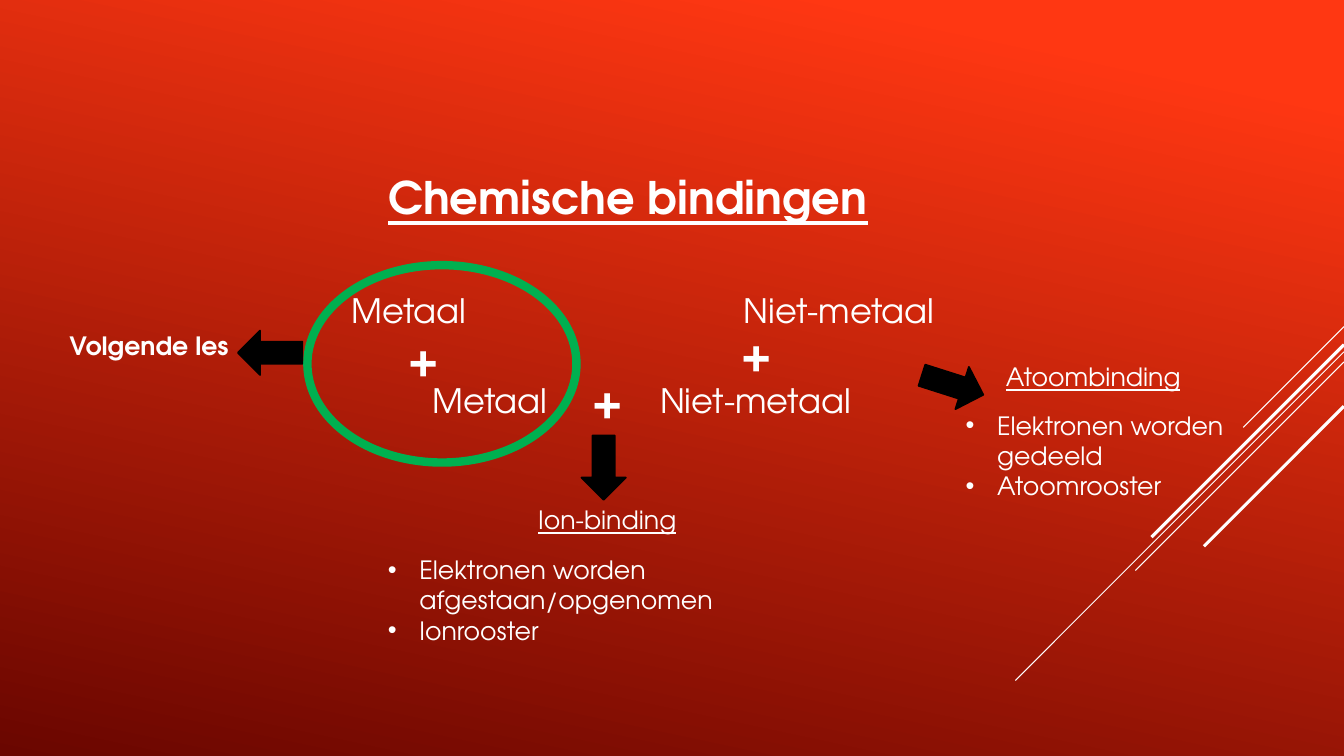
from lxml import etree
from pptx import Presentation
from pptx import util as u
from pptx.dml.color import RGBColor
from pptx.enum import shapes, text
from pptx.oxml.ns import qn

Pt = u.Pt
WIDTH, HEIGHT = 960, 540
FONT = "TeX Gyre Adventor"


def colour(value):
    return RGBColor.from_string(value)


def write(box, place, lines, size, bold=False, underline=False, bullets=False):
    box.left, box.top, box.width, box.height = [Pt(n) for n in place]
    frame = box.text_frame
    frame.word_wrap = True
    frame.auto_size = text.MSO_AUTO_SIZE.NONE
    frame.vertical_anchor = text.MSO_ANCHOR.TOP
    for number, line in enumerate(lines):
        para = frame.add_paragraph() if number else frame.paragraphs[0]
        para.alignment = text.PP_ALIGN.LEFT
        span = para.add_run()
        span.text = line
        span.font.name = FONT
        span.font.size = Pt(size)
        span.font.bold = bold
        span.font.underline = underline
        span.font.color.rgb = colour("FFFFFF")
        if bullets:
            props = para._p.get_or_add_pPr()
            props.set("marL", str(Pt(22.5)))
            props.set("indent", str(-Pt(22.5)))
            etree.SubElement(props, qn("a:buFont"), typeface="Arial")
            etree.SubElement(props, qn("a:buChar"), char="•")


deck = Presentation()
deck.slide_width, deck.slide_height = Pt(WIDTH), Pt(HEIGHT)
page = deck.slides.add_slide(deck.slide_layouts[5])

# Background gradient
backdrop = page.background.fill
backdrop.gradient()
backdrop.gradient_angle = 258
for stop, (position, shade) in zip(backdrop.gradient_stops,
                                   [(0.1, "FF3712"), (1, "6A0600")]):
    stop.position = position
    stop.color.rgb = colour(shade)

# Diagonal lines from the right edge, all at 45 degrees: start height, run, weight
for start, run, weight in [(233.3, 72, 0.75), (251.3, 234.7, 0.75),
                           (258.5, 149, 0.75), (246.2, 137.5, 2.25),
                           (290.2, 100, 2.25)]:
    line = page.shapes.add_connector(shapes.MSO_CONNECTOR.STRAIGHT, Pt(WIDTH), Pt(start),
                                     Pt(WIDTH - run), Pt(start + run))
    line.line.color.rgb = colour("FFFFFF")
    line.line.width = Pt(weight)
    etree.SubElement(line._element.spPr, qn("a:effectLst"))

# Title
write(page.shapes.title, (270, 117.4, 368, 46), ["Chemische bindingen"], 32,
      bold=True, underline=True)

# Text: place, lines, size, style
labels = [
    ((244, 203.8, 106, 36), ["Metaal"], 24, {}),
    ((464.4, 267.8, 160.6, 36), ["Niet-metaal"], 24, {}),
    ((301.7, 267.8, 104, 36), ["Metaal"], 24, {}),
    ((524, 203.8, 158.4, 36), ["Niet-metaal"], 24, {}),
    ((283.7, 232.6, 44.6, 46), ["+"], 32, {"bold": True}),
    ((522, 229, 44.6, 46), ["+"], 32, {"bold": True}),
    ((415.4, 262.8, 44.6, 46), ["+"], 32, {"bold": True}),
    ((377.3, 356.4, 157.7, 29), ["Ion-binding"], 18, {"underline": True}),
    ((270, 392.4, 349, 73), ["Elektronen worden afgestaan/opgenomen", "Ionrooster"], 18,
     {"bullets": True}),
    ((42.5, 232.6, 130.3, 29), ["Volgende les"], 18, {"bold": True}),
    ((711.4, 254.2, 167.8, 29), ["Atoombinding"], 18, {"underline": True}),
    ((682.6, 289.4, 236.9, 73), ["Elektronen worden gedeeld", "Atoomrooster"], 18,
     {"bullets": True}),
]
for place, lines, size, style in labels:
    write(page.shapes.add_textbox(0, 0, 0, 0), place, lines, size, **style)

# Ring around the two metals
ring = page.shapes.add_shape(shapes.MSO_SHAPE.OVAL, Pt(219.6), Pt(189.4), Pt(192.2), Pt(141))
ring.shadow.inherit = False
ring.fill.background()
ring.line.color.rgb = colour("00B050")
ring.line.width = Pt(6)

# Arrows to the bond types: left, top, rotation
for left, top, turn in [(415.4, 311, 0), (177.1, 229, 90), (664.6, 252, 287.7)]:
    arrow = page.shapes.add_shape(shapes.MSO_SHAPE.DOWN_ARROW, Pt(left), Pt(top),
                                  Pt(31.7), Pt(46))
    arrow.rotation = turn
    arrow.shadow.inherit = False
    arrow.fill.solid()
    arrow.fill.fore_color.rgb = colour("000000")
    arrow.line.color.rgb = colour("000000")
    arrow.line.width = Pt(1.25)

deck.save("out.pptx")
